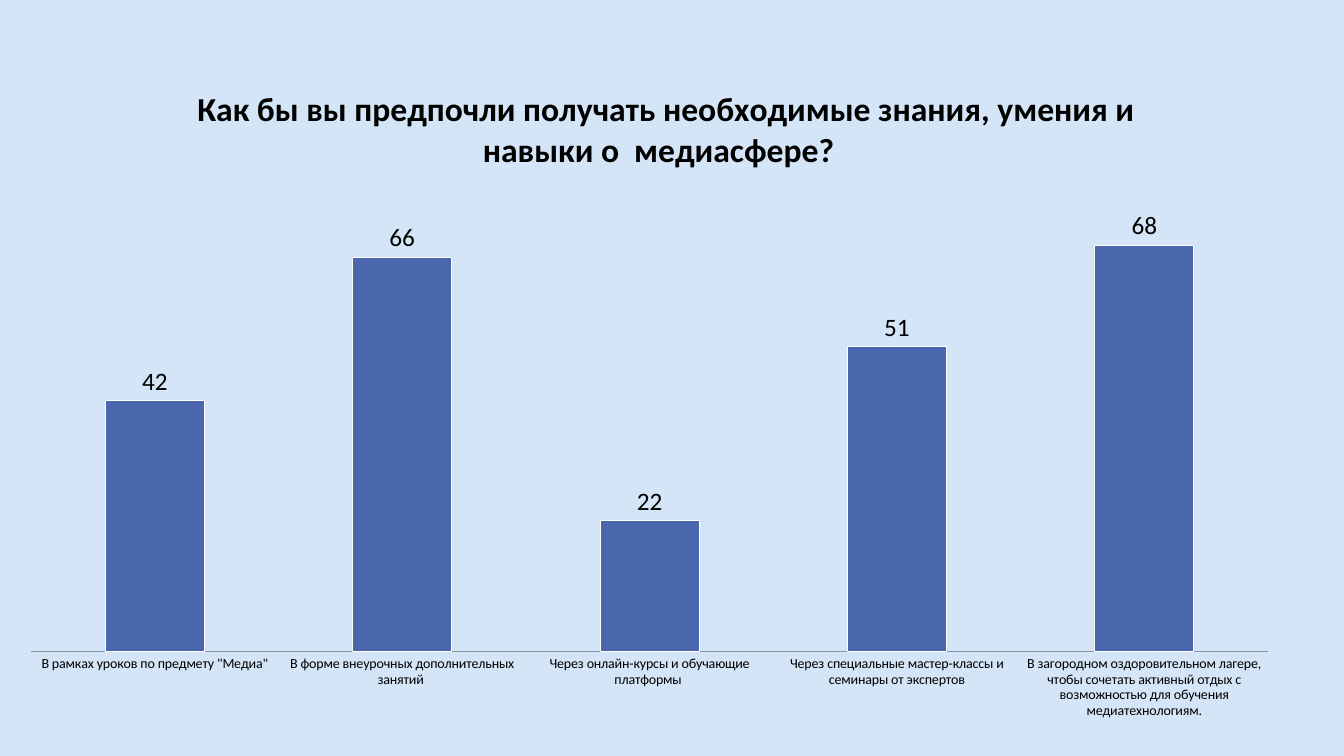
from lxml import etree
from pptx import Presentation
from pptx.chart.data import CategoryChartData
from pptx.dml.color import RGBColor
from pptx.enum.chart import XL_CHART_TYPE, XL_LABEL_POSITION, XL_TICK_MARK
from pptx.oxml.ns import qn
from pptx.util import Inches, Pt

COLUMNS = XL_CHART_TYPE.COLUMN_CLUSTERED
OUTSIDE_END = XL_LABEL_POSITION.OUTSIDE_END
NO_TICKS = XL_TICK_MARK.NONE

BACKGROUND = RGBColor(0xD4, 0xE5, 0xF7)
BLUE = RGBColor(0x4A, 0x66, 0xAC)
GREY = RGBColor(0x8A, 0x96, 0xA4)
WHITE = RGBColor(0xFF, 0xFF, 0xFF)
BLACK = RGBColor(0, 0, 0)
FONT = "Calibri"

TITLE = (" Как бы вы предпочли получать необходимые знания, умения и "
         "навыки о  медиасфере? ")
ANSWERS = [
    ('В рамках уроков по предмету "Медиа"', 42),
    ("В форме внеурочных дополнительных занятий ", 66),
    ("Через онлайн-курсы и обучающие платформы ", 22),
    ("Через специальные мастер-классы и семинары от экспертов", 51),
    ("В загородном оздоровительном лагере, чтобы сочетать активный отдых "
     "с возможностью для обучения медиатехнологиям.", 68),
]
PLOT_LAYOUT = [("layoutTarget", "inner"), ("xMode", "edge"), ("yMode", "edge"),
               ("x", 0.007), ("y", 0.171), ("w", 0.966), ("h", 0.732)]

prs = Presentation()
prs.slide_width = Inches(13.33)
prs.slide_height = Inches(7.5)
s = prs.slides.add_slide(prs.slide_layouts[6])
s.background.fill.solid()
s.background.fill.fore_color.rgb = BACKGROUND

# Chart and its data
data = CategoryChartData()
data.categories = [answer for answer, votes in ANSWERS]
data.add_series("Series 1", [votes for answer, votes in ANSWERS])
chart = s.shapes.add_chart(COLUMNS, Inches(0.22), Inches(0.61),
                           Inches(12.7), Inches(6.52), data).chart
chart.has_legend = False
chart.font.name = FONT
chart.font.size = Pt(18)
chart.font.color.rgb = BLACK

# Title
chart.has_title = True
p = chart.chart_title.text_frame.paragraphs[0]
p.text = TITLE
p.font.name = FONT
p.font.size = Pt(24)
p.font.bold = True
p.font.color.rgb = BLACK

# Axes
category_axis = chart.category_axis
category_axis.major_tick_mark = NO_TICKS
category_axis.minor_tick_mark = NO_TICKS
category_axis.tick_labels.font.size = Pt(10)
category_axis.format.line.color.rgb = GREY
category_axis.format.line.width = Pt(0.75)
value_axis = chart.value_axis
value_axis.minimum_scale = 0
value_axis.maximum_scale = 80
value_axis.has_major_gridlines = False
value_axis.visible = False

# Columns and their labels
plot = chart.plots[0]
plot.vary_by_categories = False
plot.gap_width = 150
plot.overlap = -25
column = plot.series[0]
column.format.fill.solid()
column.format.fill.fore_color.rgb = BLUE
column.format.line.color.rgb = WHITE
column.format.line.width = Pt(0.75)
labels = column.data_labels
labels.show_value = True
labels.position = OUTSIDE_END
labels.font.size = Pt(18)
labels.font.color.rgb = BLACK

# Fixed plot area, measured without the axis labels
plot_area = chart.element.chart.plotArea
for layout in plot_area.findall(qn("c:layout")):
    plot_area.remove(layout)
layout = etree.Element(qn("c:layout"))
plot_area.insert(0, layout)
manual = etree.SubElement(layout, qn("c:manualLayout"))
for tag, value in PLOT_LAYOUT:
    etree.SubElement(manual, qn(f"c:{tag}")).set("val", str(value))

prs.save("out.pptx")
